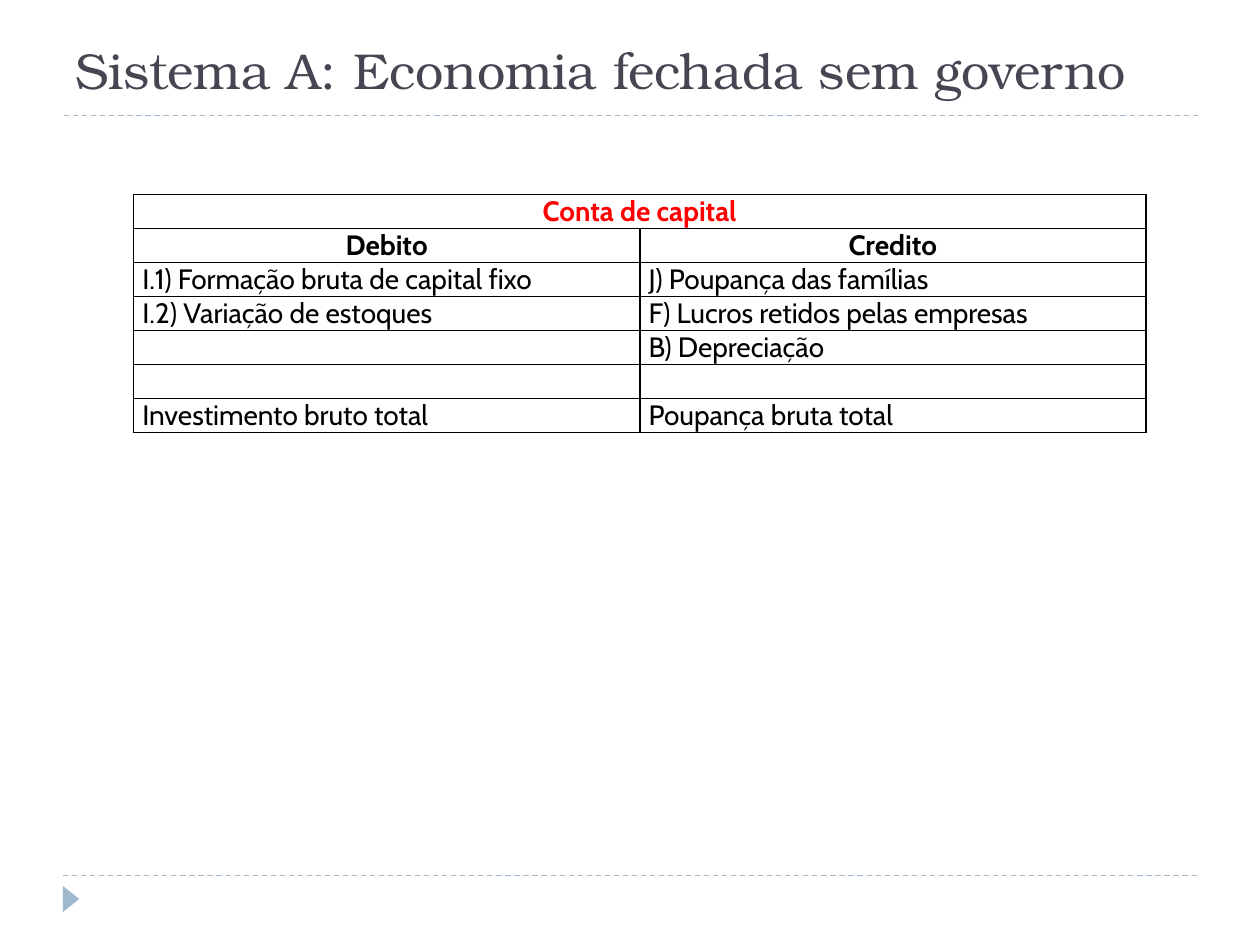
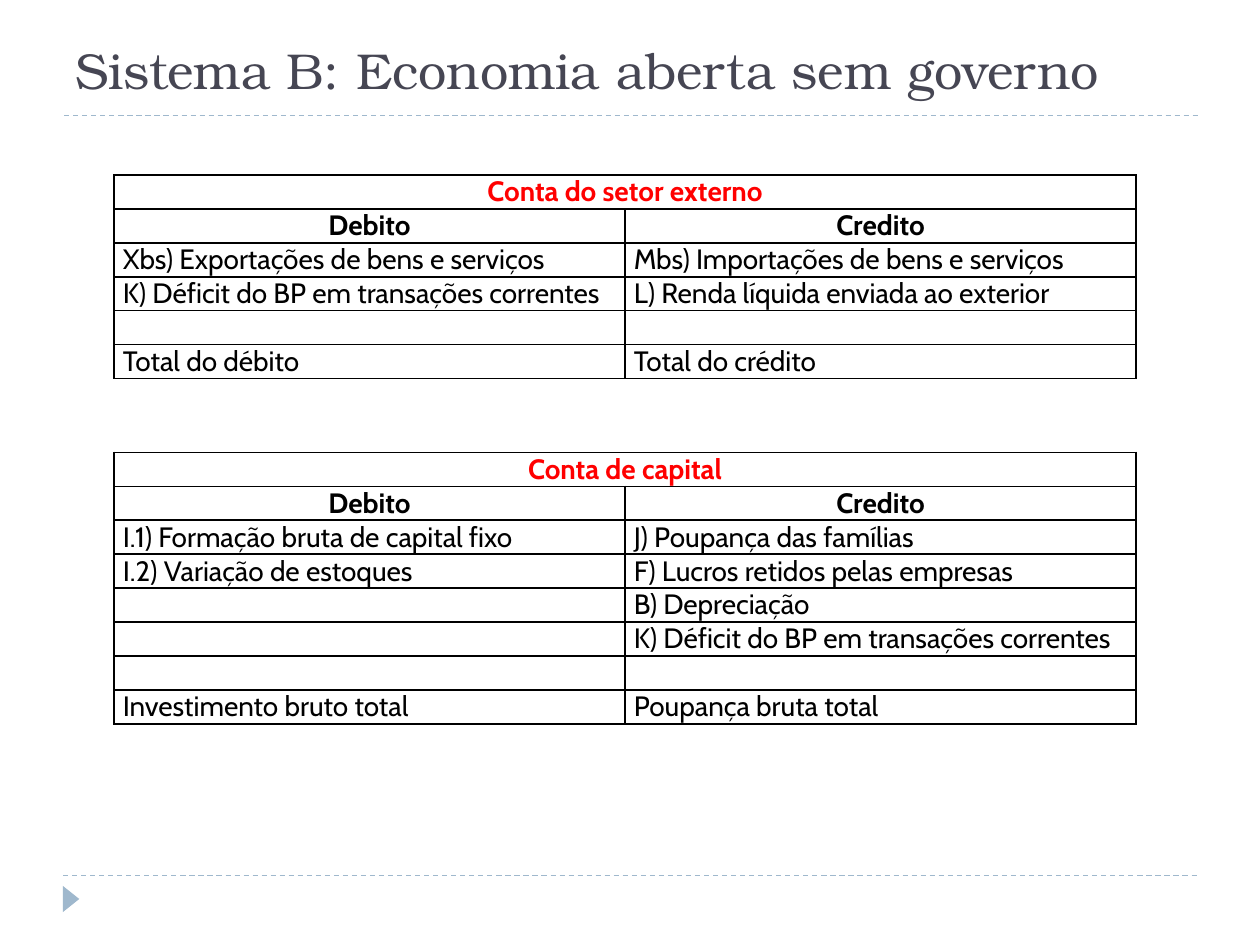
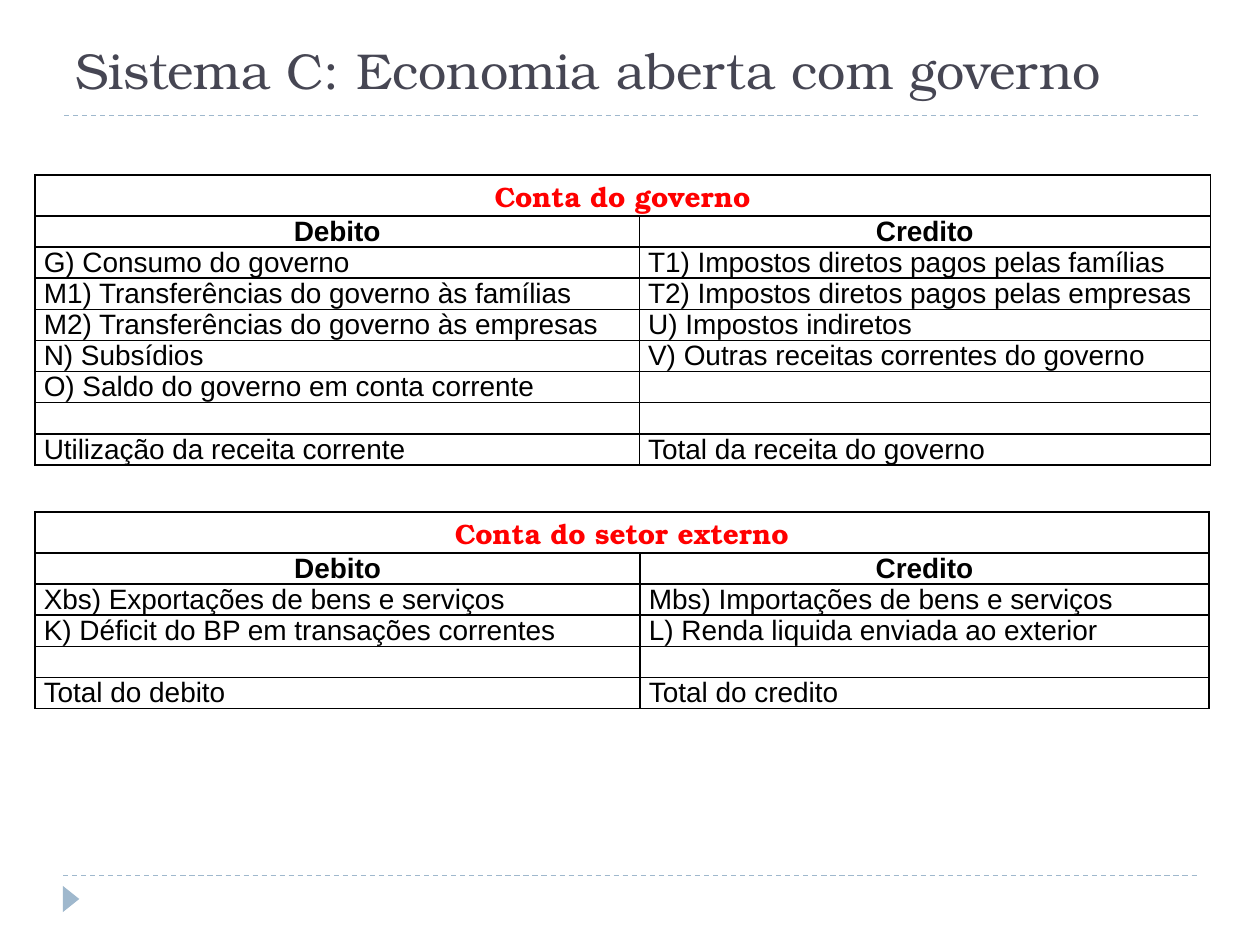
from dataclasses import dataclass

from lxml.etree import SubElement
from pptx import Presentation
from pptx.dml.color import RGBColor
from pptx.enum.dml import MSO_LINE
from pptx.enum.shapes import MSO_CONNECTOR, MSO_SHAPE
from pptx.enum.text import MSO_ANCHOR, MSO_AUTO_SIZE, PP_ALIGN
from pptx.oxml.ns import qn
from pptx.util import Pt

HUES = {"title": "464653", "accent": "9FB8CD", "head": "FF0000", "ink": "000000"}
SERIF, SANS, ARIAL = "TeX Gyre Bonum", "Cabin", "Arial"
SIZE = 16


@dataclass
class Account:
    name: str
    left: float
    top: float
    cols: tuple[float, float]
    rows: list[tuple[str, str]]
    head: str = SANS
    font: str = SANS
    first: float = 19.4  # height of the name row
    high: float = 19.4  # height of every other row


@dataclass
class Page:
    title: str
    tables: list[Account]


# Accounts on each slide
SAVINGS = [
    ("I.1) Formação bruta de capital fixo", "J) Poupança das famílias"),
    ("I.2) Variação de estoques", "F) Lucros retidos pelas empresas"),
    ("", "B) Depreciação"),
]
TOTAL = [("", ""), ("Investimento bruto total", "Poupança bruta total")]
DEFICIT = "K) Déficit do BP em transações correntes"
TRADE = ("Xbs) Exportações de bens e serviços", "Mbs) Importações de bens e serviços")
WIDE = dict(head=SERIF, font=ARIAL, first=23.1, high=17.8)

PAGES = [
    Page("Sistema A: Economia fechada sem governo", [
        Account("Conta de capital", 76.4, 111.3, (289.2, 289.2), SAVINGS + TOTAL),
    ]),
    Page("Sistema B: Economia aberta sem governo", [
        Account("Conta do setor externo", 65.2, 100, (292, 292), [
            TRADE,
            (DEFICIT, "L) Renda líquida enviada ao exterior"),
            ("", ""),
            ("Total do débito", "Total do crédito"),
        ]),
        Account("Conta de capital", 65.2, 258.5, (292, 292),
                SAVINGS + [("", DEFICIT)] + TOTAL),
    ]),
    Page("Sistema C: Economia aberta com governo", [
        Account("Conta do governo", 20, 100, (345.4, 326.2), [
            ("G) Consumo do governo", "T1) Impostos diretos pagos pelas famílias"),
            ("M1) Transferências do governo às famílias",
             "T2) Impostos diretos pagos pelas empresas"),
            ("M2) Transferências do governo às empresas", "U) Impostos indiretos"),
            ("N) Subsídios", "V) Outras receitas correntes do governo"),
            ("O) Saldo do governo em conta corrente", ""),
            ("", ""),
            ("Utilização da receita corrente", "Total da receita do governo"),
        ], **WIDE),
        Account("Conta do setor externo", 20, 292.6, (345.8, 325), [
            TRADE,
            (DEFICIT, "L) Renda liquida enviada ao exterior"),
            ("", ""),
            ("Total do debito", "Total do credito"),
        ], **WIDE),
    ]),
]


def paint(hue: str) -> RGBColor:
    return RGBColor.from_string(HUES[hue])


def write(frame, text: str, *, font: str, size: float = SIZE, hue: str = "ink",
          bold: bool = False, align=PP_ALIGN.LEFT) -> None:
    para = frame.paragraphs[0]
    para.alignment = align
    if not text:
        # A small end mark keeps an empty cell from growing
        SubElement(para._p, qn("a:endParaRPr"), sz="1200")
        return
    run = para.add_run()
    run.text = text
    run.font.name, run.font.size, run.font.bold = font, Pt(size), bold
    run.font.color.rgb = paint(hue)


def rule(slide, left: float, top: float) -> None:
    line = slide.shapes.add_connector(
        MSO_CONNECTOR.STRAIGHT, Pt(left), Pt(top), Pt(left + 648), Pt(top))
    line.line.color.rgb = paint("accent")
    line.line.width = Pt(0.75)
    line.line.dash_style = MSO_LINE.DASH
    SubElement(line._element.spPr, qn("a:effectLst"))


def adorn(slide) -> None:
    rule(slide, 36, 500.4)
    rule(slide, 36.7, 66.2)
    mark = slide.shapes.add_shape(
        MSO_SHAPE.ISOSCELES_TRIANGLE, Pt(33.1), Pt(509), Pt(15), Pt(9.4))
    mark.rotation = 90
    mark.shadow.inherit = False
    mark.fill.solid()
    mark.fill.fore_color.rgb = paint("accent")
    mark.line.fill.background()


def head(slide, text: str) -> None:
    title = slide.shapes.title
    title.left, title.top, title.width, title.height = Pt(36), Pt(12.2), Pt(648), Pt(48.2)
    frame = title.text_frame
    frame.auto_size = MSO_AUTO_SIZE.NONE
    frame.vertical_anchor = MSO_ANCHOR.BOTTOM
    write(frame, text, font=SERIF, size=28.8, hue="title")


def frame_cell(cell) -> None:
    cell.margin_left = cell.margin_right = Pt(5)
    cell.margin_top = cell.margin_bottom = 0
    props = cell._tc.get_or_add_tcPr()
    for side in ("lnL", "lnR", "lnT", "lnB"):
        edge = SubElement(props, qn(f"a:{side}"), w=str(Pt(1)))
        fill = SubElement(edge, qn("a:solidFill"))
        SubElement(fill, qn("a:srgbClr"), val=HUES["ink"])
    cell.fill.background()


def draw(slide, acc: Account) -> None:
    count = len(acc.rows) + 2
    tall = acc.first + acc.high * (count - 1)
    table = slide.shapes.add_table(
        count, 2, Pt(acc.left), Pt(acc.top), Pt(sum(acc.cols)), Pt(tall)).table
    table.first_row = table.horz_banding = False
    for col, wide in zip(table.columns, acc.cols):
        col.width = Pt(wide)
    for num, row in enumerate(table.rows):
        row.height = Pt(acc.high if num else acc.first)
        for cell in row.cells:
            frame_cell(cell)

    # Name across both columns, then the two sides of the account
    table.cell(0, 0).merge(table.cell(0, 1))
    write(table.cell(0, 0).text_frame, acc.name, font=acc.head, hue="head",
          bold=True, align=PP_ALIGN.CENTER)
    write(table.cell(0, 1).text_frame, "", font=acc.font)
    for num, pair in enumerate([("Debito", "Credito")] + acc.rows, 1):
        top = num == 1
        for col, text in enumerate(pair):
            write(table.cell(num, col).text_frame, text, font=acc.font, bold=top,
                  align=PP_ALIGN.CENTER if top else PP_ALIGN.JUSTIFY)


def main() -> None:
    deck = Presentation()
    deck.slide_width, deck.slide_height = Pt(720), Pt(540)
    for page in PAGES:
        slide = deck.slides.add_slide(deck.slide_layouts[5])
        adorn(slide)
        head(slide, page.title)
        for acc in page.tables:
            draw(slide, acc)
    deck.save("out.pptx")


if __name__ == "__main__":
    main()
